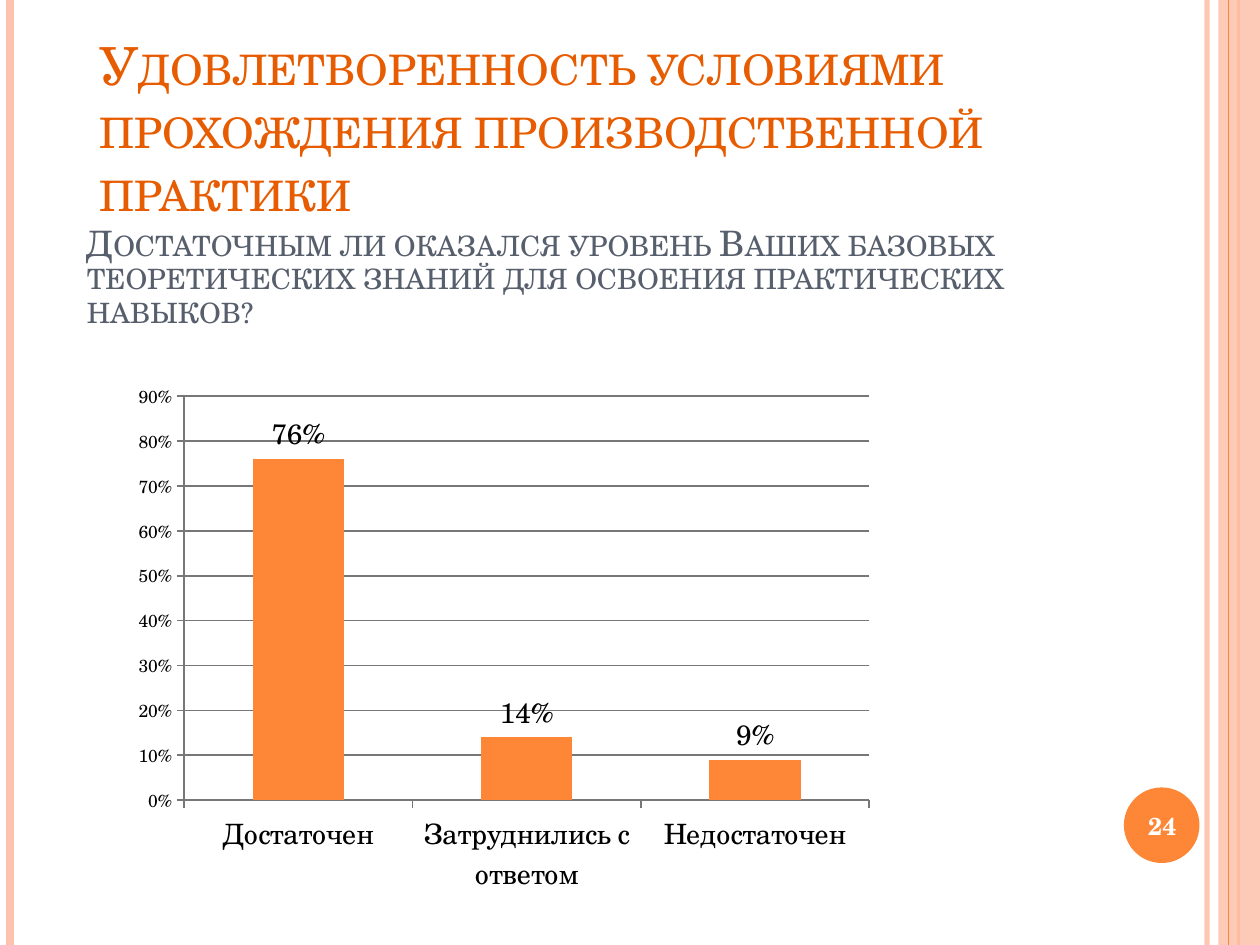
from lxml.etree import SubElement as Sub
from pptx import Presentation
from pptx.chart.data import CategoryChartData as Data
from pptx.dml.color import RGBColor as RGB
from pptx.enum.chart import XL_CHART_TYPE as Kind, XL_LABEL_POSITION as Pos, XL_TICK_MARK as Tick
from pptx.enum.shapes import MSO_CONNECTOR as Conn, MSO_SHAPE as Shape
from pptx.enum.text import MSO_ANCHOR as Anchor, PP_ALIGN as Align
from pptx.oxml.ns import qn
from pptx.util import Inches, Pt

WIDE, HIGH = Inches(10), Inches(7.5)
FONT = "TeX Gyre Schola"
HUES = {"pink": "FEC3AE", "orange": "FE8637", "rust": "E75C01",
        "slate": "575F6D", "white": "FFFFFF", "black": "000000", "gray": "777777"}


def hue(name):
    return RGB.from_string(HUES[name])


def area(left, top, width, height):
    return [int(part * side / 100) for part, side in
            zip((left, top, width, height), (WIDE, HIGH, WIDE, HIGH))]


def fade(fill, alpha):
    for color in fill.iter(qn("a:srgbClr")):
        Sub(color, qn("a:alpha")).set("val", str(alpha * 1000))


def rule(slide, left, color, weight, alpha=100):
    x = int(WIDE * left / 100)
    line = slide.shapes.add_connector(Conn.STRAIGHT, x, 0, x, HIGH)
    line.line.color.rgb = hue(color)
    line.line.width = Pt(weight)
    props = line._element.spPr
    if alpha < 100:
        fade(props, alpha)
    Sub(props, qn("a:effectLst"))


def block(slide, kind, box, color, alpha=100):
    shape = slide.shapes.add_shape(kind, *area(*box))
    shape.shadow.inherit = False
    shape.fill.solid()
    shape.fill.fore_color.rgb = hue(color)
    shape.line.fill.background()
    if alpha < 100:
        fade(shape._element.spPr, alpha)


def write(slide, text, box, size, color, bold=False, small=False,
          align=Align.LEFT, anchor=Anchor.TOP, space=None):
    frame = slide.shapes.add_textbox(*area(*box)).text_frame
    frame.word_wrap = True
    frame.vertical_anchor = anchor
    para = frame.paragraphs[0]
    para.alignment = align
    para.line_spacing = space
    run = para.add_run()
    run.text = text
    style(run.font, size, color, bold)
    if small:
        run.font._element.set("cap", "small")


def style(font, size, color="black", bold=False):
    font.name = FONT
    font.size = Pt(size)
    font.bold = bold
    font.color.rgb = hue(color)


def stroke(line):
    line.color.rgb = hue("gray")
    line.width = Pt(1)


def bars(slide, box, rows):
    data = Data(number_format="0%")
    data.categories = list(rows)
    data.add_series("Series 1", list(rows.values()))
    chart = slide.shapes.add_chart(Kind.COLUMN_CLUSTERED, *area(*box), data).chart
    chart.has_legend = chart.has_title = False
    style(chart.font, 10)
    for axis, size in ((chart.category_axis, 16), (chart.value_axis, 10)):
        style(axis.tick_labels.font, size)
        axis.major_tick_mark = Tick.OUTSIDE
        axis.minor_tick_mark = Tick.NONE
        stroke(axis.format.line)
    scale = chart.value_axis
    scale.minimum_scale, scale.maximum_scale, scale.major_unit = 0, 0.9, 0.1
    scale.tick_labels.number_format = "0%"
    scale.tick_labels.number_format_is_linked = False
    scale.has_major_gridlines = True
    stroke(scale.major_gridlines.format.line)
    plot = chart.plots[0]
    plot.gap_width = 150
    plot.vary_by_categories = False
    fill = plot.series[0].format.fill
    fill.solid()
    fill.fore_color.rgb = hue("orange")
    labels = plot.series[0].data_labels
    labels.show_value = True
    labels.position = Pos.OUTSIDE_END
    labels.number_format = "0%"
    labels.number_format_is_linked = False
    style(labels.font, 16)


def main():
    deck = Presentation()
    deck.slide_width, deck.slide_height = WIDE, HIGH
    slide = deck.slides.add_slide(deck.slide_layouts[6])
    rule(slide, 95.8, "pink", 3, alpha=93)
    rule(slide, 0.8, "pink", 4.5)
    rule(slide, 98.3, "orange", 1.5)
    block(slide, Shape.RECTANGLE, (96.7, 0, 3.3, 100), "pink", alpha=87)
    rule(slide, 97.5, "orange", 0.75)
    block(slide, Shape.OVAL, (89.2, 83.33, 6, 8), "orange")
    write(slide, "24", (88.9, 83.6, 6.7, 7.6), 14, "white", bold=True,
          align=Align.CENTER, anchor=Anchor.MIDDLE)
    write(slide, "Удовлетворенность условиями прохождения производственной практики",
          (6.9, 2.8, 86.2, 10.4), 30, "rust", small=True)
    write(slide, "Достаточным ли оказался уровень Ваших базовых теоретических знаний "
          "для освоения практических навыков?",
          (5.9, 23.6, 81.9, 12.13), 20, "slate", small=True, space=0.8)
    bars(slide, (9.8, 39.47, 60.4, 56.27),
         {"Достаточен": 0.76, "Затруднились с ответом": 0.14, "Недостаточен": 0.09})
    deck.save("out.pptx")


if __name__ == "__main__":
    main()
